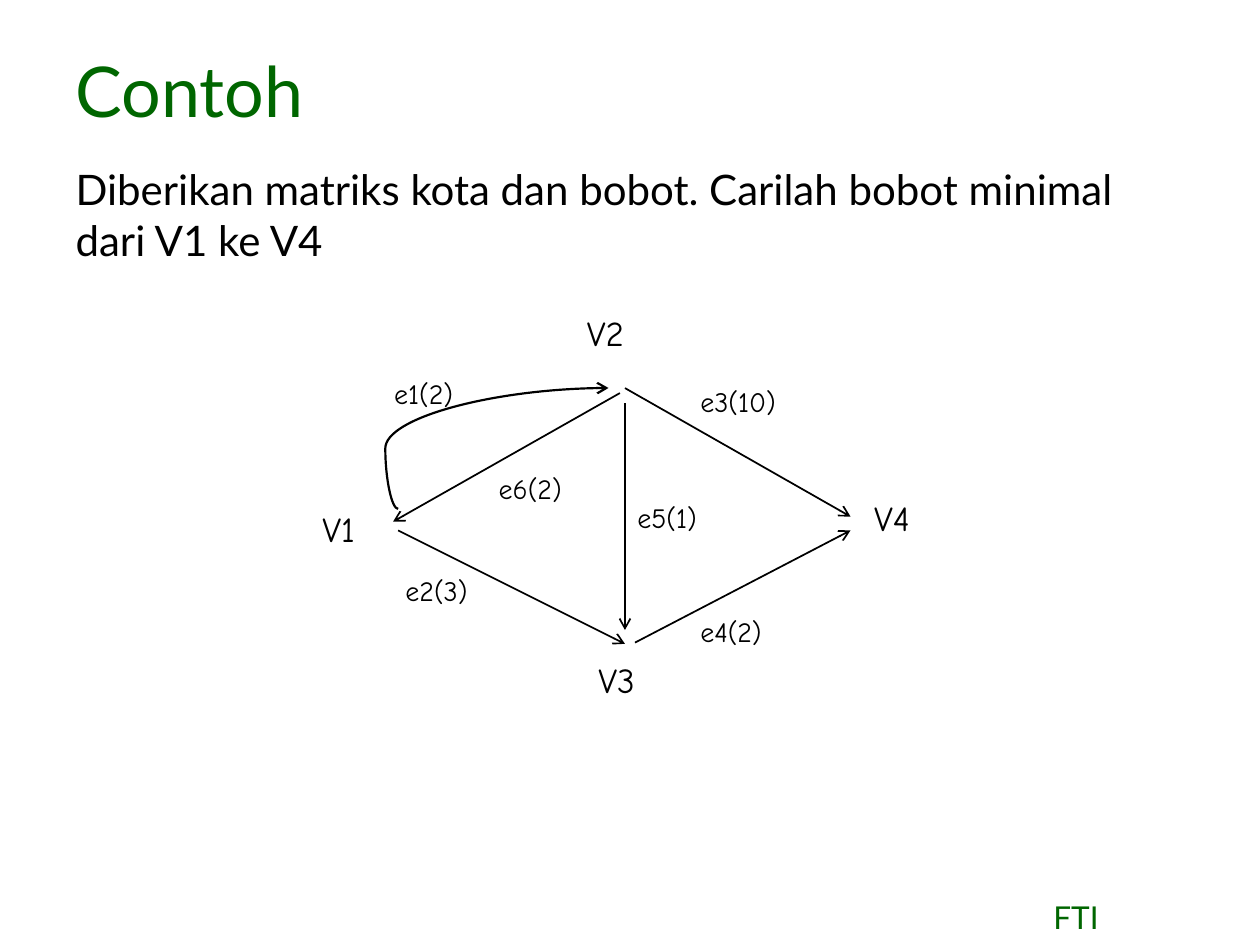
"""Build a slide showing a weighted directed graph of four cities."""

from typing import NamedTuple

import lxml.etree
import pptx
import pptx.dml.color
import pptx.enum.shapes
import pptx.enum.text
import pptx.oxml.ns
import pptx.util

Inches = pptx.util.Inches
qn = pptx.oxml.ns.qn
ALIGN = pptx.enum.text.PP_ALIGN
ANCHOR = pptx.enum.text.MSO_ANCHOR
CONNECTOR = pptx.enum.shapes.MSO_CONNECTOR

COLORS = {"green": "006600", "black": "000000"}
TEXT_FONT = "Lato"
GRAPH_FONT = "Comic Neue"


class Label(NamedTuple):
    text: str
    left: float
    top: float
    width: float


class Edge(NamedTuple):
    start: tuple[float, float]
    end: tuple[float, float]


VERTICES = [
    Label("V1", 2.46, 3.98, 0.7),
    Label("V2", 4.56, 2.42, 0.7),
    Label("V3", 4.65, 5.18, 0.7),
    Label("V4", 6.84, 3.89, 0.7),
]
WEIGHTS = [
    Label("e1(2)", 3.03, 2.94, 0.73),
    Label("e2(3)", 3.12, 4.5, 0.76),
    Label("e3(10)", 5.46, 3, 0.86),
    Label("e4(2)", 5.46, 4.83, 0.76),
    Label("e5(1)", 4.96, 3.92, 0.73),
    Label("e6(2)", 3.86, 3.69, 0.76),
]
EDGES = [
    Edge((3.16, 4.21), (4.96, 5.11)),
    Edge((4.96, 3.08), (6.75, 4.1)),
    Edge((5.04, 5.1), (6.75, 4.21)),
    Edge((4.96, 3.2), (4.96, 5)),
    Edge((4.92, 3.12), (3.12, 4.14)),
]
CURVED_EDGE = Edge((3.16, 4.04), (4.83, 3.08))
CURVE_ADJUSTMENT = -6100


def place(shape, left: float, top: float, width: float, height: float) -> None:
    shape.left, shape.top = Inches(left), Inches(top)
    shape.width, shape.height = Inches(width), Inches(height)


def write(box, text: str, *, size: float, font: str = TEXT_FONT, color: str = "black",
          align=ALIGN.LEFT, anchor=ANCHOR.TOP, wrap: bool = True) -> None:
    frame = box.text_frame
    frame.word_wrap = wrap
    frame.auto_size = pptx.enum.text.MSO_AUTO_SIZE.NONE
    frame.vertical_anchor = anchor
    para = frame.paragraphs[0]
    para.alignment = align
    para.space_before = pptx.util.Pt(0)
    span = para.add_run()
    span.text = text
    span.font.name = font
    span.font.size = pptx.util.Pt(size)
    span.font.color.rgb = pptx.dml.color.RGBColor.from_string(COLORS[color])


def remove_bullet(box) -> None:
    properties = box.text_frame.paragraphs[0]._p.get_or_add_pPr()
    properties.set("marL", "0")
    properties.set("indent", "0")
    lxml.etree.SubElement(properties, qn("a:buNone"))


def draw_label(page, label: Label, height: float, size: float, wrap: bool) -> None:
    box = page.shapes.add_textbox(Inches(label.left), Inches(label.top),
                                  Inches(label.width), Inches(height))
    write(box, label.text, size=size, font=GRAPH_FONT, wrap=wrap)


def draw_edge(page, edge: Edge, kind=CONNECTOR.STRAIGHT, width: float = 1):
    points = [Inches(value) for value in (*edge.start, *edge.end)]
    connector = page.shapes.add_connector(kind, *points)
    connector.line.color.rgb = pptx.dml.color.RGBColor.from_string(COLORS["black"])
    connector.line.width = pptx.util.Pt(width)
    lxml.etree.SubElement(connector.line._get_or_add_ln(), qn("a:tailEnd"), type="arrow")
    lxml.etree.SubElement(connector._element.spPr, qn("a:effectLst"))
    return connector


def main() -> None:
    deck = pptx.Presentation()
    deck.slide_width, deck.slide_height = Inches(10), Inches(7.5)
    page = deck.slides.add_slide(deck.slide_layouts[1])

    title = page.shapes.title
    place(title, 0.5, 0.42, 2.88, 0.67)
    write(title, "Contoh", size=40, color="green", anchor=ANCHOR.BOTTOM)

    body = page.placeholders[1]
    place(body, 0.5, 1.25, 9, 5.08)
    remove_bullet(body)
    write(body, "Diberikan matriks kota dan bobot. Carilah bobot minimal dari V1 ke V4", size=24)

    footer = page.shapes.add_textbox(Inches(7.58), Inches(7.08), Inches(1.92), Inches(0.42))
    write(footer, "FTI", size=18, color="green", align=ALIGN.CENTER)

    for edge in EDGES:
        draw_edge(page, edge)
    for vertex in VERTICES:
        draw_label(page, vertex, height=0.48, size=20, wrap=True)
    for weight in WEIGHTS:
        draw_label(page, weight, height=0.37, size=16, wrap=False)

    curve = draw_edge(page, CURVED_EDGE, kind=CONNECTOR.CURVE, width=1.25)
    guides = curve._element.spPr.find(qn("a:prstGeom")).get_or_add_avLst()
    lxml.etree.SubElement(guides, qn("a:gd"), name="adj1", fmla=f"val {CURVE_ADJUSTMENT}")

    deck.save("out.pptx")


if __name__ == "__main__":
    main()
